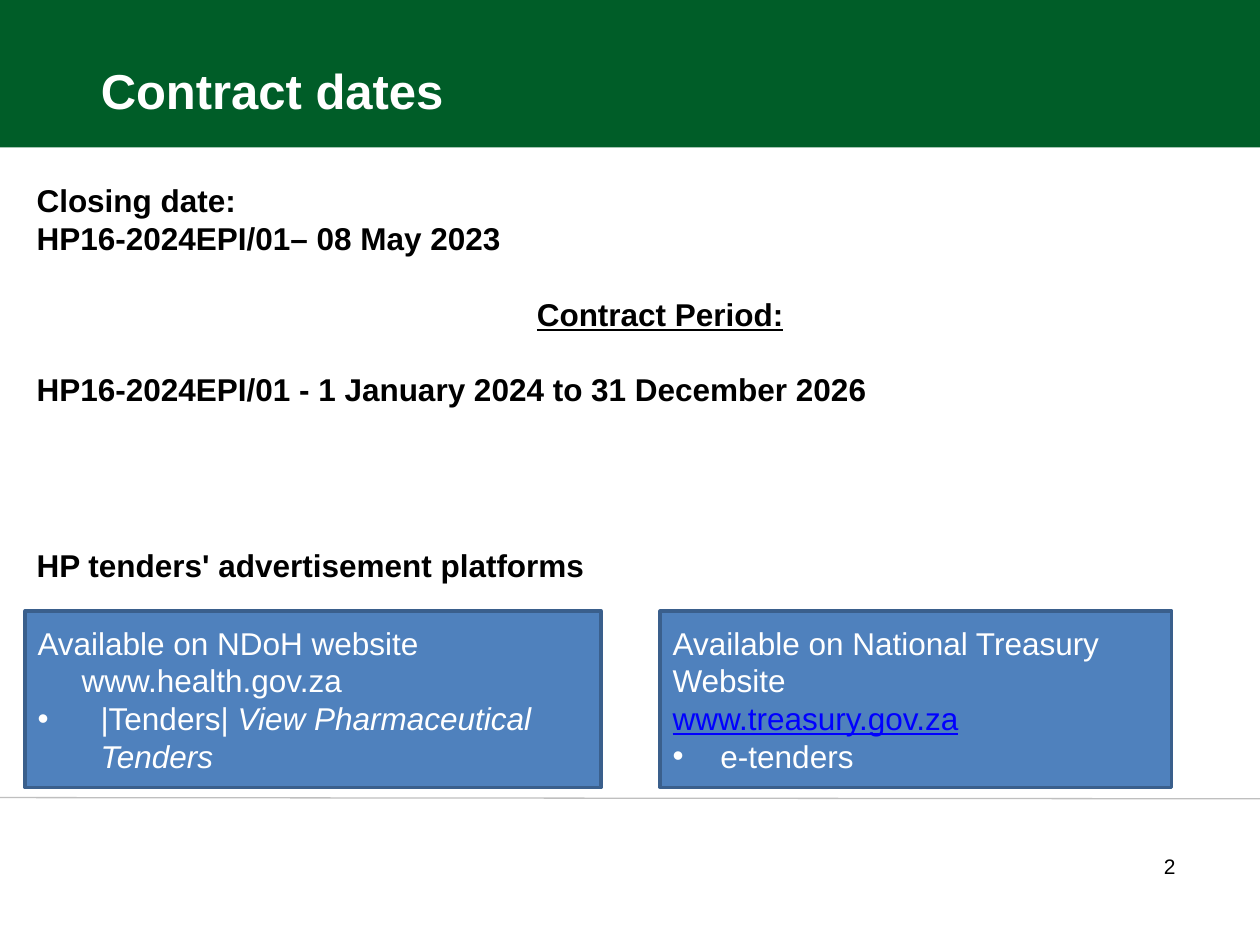
import dataclasses

import pptx
import pptx.dml.color
import pptx.enum.shapes
import pptx.enum.text
import pptx.oxml
import pptx.oxml.ns
import pptx.util

ALIGN = pptx.enum.text.PP_ALIGN
ANCHOR = pptx.enum.text.MSO_ANCHOR
RECTANGLE = pptx.enum.shapes.MSO_SHAPE.RECTANGLE


@dataclasses.dataclass(frozen=True)
class Theme:
    font: str = "Arial"
    band: str = "005D28"
    rule: str = "BFBFBF"
    panel: str = "4F81BD"
    panel_edge: str = "3A5F8C"
    dark: str = "000000"
    light: str = "FFFFFF"
    link: str = "0000FF"
    title_size: int = 28
    text_size: int = 18
    number_size: int = 12


THEME = Theme()
# The page is a grid of 100 columns and 75 rows, each 0.1 inch
CELL = 0.1
COLUMNS, ROWS = 100, 75


def grid(*cells):
    return [pptx.util.Inches(cell * CELL) for cell in cells]


def rgb(code):
    return pptx.dml.color.RGBColor.from_string(code)


def place(shape, left, top, width, height):
    shape.left, shape.top, shape.width, shape.height = grid(left, top, width, height)


def set_frame(shape, anchor):
    frame = shape.text_frame
    frame.word_wrap = True
    frame.auto_size = pptx.enum.text.MSO_AUTO_SIZE.NONE
    frame.vertical_anchor = anchor
    return frame


def set_indent(para, indent, bullet):
    """Indent a paragraph in inches, hanging when it has a bullet."""
    properties = para._p.get_or_add_pPr()
    margin = pptx.util.Inches(indent)
    properties.set("marL", str(margin))
    properties.set("indent", str(-margin if bullet else 0))
    namespace = pptx.oxml.ns.nsdecls("a")
    if bullet:
        markup = f'<a:buFont {namespace} typeface="{THEME.font}"/>', f'<a:buChar {namespace} char="•"/>'
    else:
        markup = (f"<a:buNone {namespace}/>",)
    for element in markup:
        properties.append(pptx.oxml.parse_xml(element))


def write(para, spans, size, color, bold=False, align=ALIGN.LEFT,
          before=0, indent=0, bullet=False):
    """Write spans of (text, font changes) into one paragraph."""
    set_indent(para, indent, bullet)
    para.alignment = align
    para.space_before = pptx.util.Pt(before)
    for text, changes in spans:
        span = para.add_run()
        span.text = text
        font = span.font
        font.name, font.size, font.bold = THEME.font, pptx.util.Pt(size), bold
        font.color.rgb = rgb(changes.get("color", color))
        font.italic = changes.get("italic", False)
        font.underline = changes.get("underline", False)


def write_all(frame, lines, **style):
    for index, (spans, options) in enumerate(lines):
        para = frame.add_paragraph() if index else frame.paragraphs[0]
        write(para, spans, **style, **options)


def add_box(page, area, fill, edge=None):
    box = page.shapes.add_shape(RECTANGLE, *grid(*area))
    box.shadow.inherit = False
    box.fill.solid()
    box.fill.fore_color.rgb = rgb(fill)
    if edge:
        box.line.color.rgb = rgb(edge)
        box.line.width = pptx.util.Pt(2)
    else:
        box.line.fill.background()
    return box


def add_background(page):
    band = add_box(page, (0, 0, COLUMNS, 11.7), THEME.band)
    rule = page.shapes.add_connector(
        pptx.enum.shapes.MSO_CONNECTOR.STRAIGHT, *grid(0, 63.3, COLUMNS, 63.4))
    rule.line.color.rgb = rgb(THEME.rule)
    rule.line.width = pptx.util.Pt(0.75)
    rule._element.spPr.append(
        pptx.oxml.parse_xml(f'<a:effectLst {pptx.oxml.ns.nsdecls("a")}/>'))
    # Both lie behind the placeholders
    for shape in (rule, band):
        page.shapes._spTree.insert(2, shape._element)


def add_title(page, text):
    title = page.shapes.title
    place(title, 7, -0.8, 60.8, 10.8)
    write_all(set_frame(title, ANCHOR.BOTTOM), [([(text, {})], {})],
              size=THEME.title_size, color=THEME.light, bold=True)


def add_dates(page, lines):
    body = page.placeholders[1]
    place(body, 1.9, 13.9, 101, 37.4)
    write_all(set_frame(body, ANCHOR.TOP), lines,
              size=THEME.text_size, color=THEME.dark, bold=True)


def add_panel(page, left, width, lines):
    panel = add_box(page, (left, 48.5, width, 14), THEME.panel, THEME.panel_edge)
    write_all(set_frame(panel, ANCHOR.MIDDLE), lines,
              size=THEME.text_size, color=THEME.light)


def add_page_number(page, number):
    box = page.shapes.add_textbox(*grid(10, 62.5, 85.7, 12.5))
    frame = set_frame(box, ANCHOR.MIDDLE)
    frame.margin_right = pptx.util.Inches(0.24)
    write_all(frame, [([(number, {})], {"align": ALIGN.RIGHT})],
              size=THEME.number_size, color=THEME.dark)


def main():
    deck = pptx.Presentation()
    deck.slide_width, deck.slide_height = grid(COLUMNS, ROWS)
    page = deck.slides.add_slide(deck.slide_layouts[1])

    add_background(page)
    add_title(page, "Contract dates")

    # Dates, with one open line between the groups
    open_line = 21.5
    add_dates(page, [
        ([("Closing date:", {})], {}),
        ([("HP16-2024EPI/01– 08 May 2023", {})], {}),
        ([("Contract Period:", {"underline": True})],
         {"align": ALIGN.CENTER, "before": open_line}),
        ([("HP16-2024EPI/01 - 1 January 2024 to 31 December 2026", {})],
         {"before": open_line}),
        ([("HP tenders' advertisement platforms", {})], {"before": 79}),
    ])

    # Advertisement platforms
    add_panel(page, 2, 45.7, [
        ([("Available on NDoH website", {})], {}),
        ([("www.health.gov.za", {})], {"indent": 0.35}),
        ([("|Tenders| ", {}), ("View Pharmaceutical Tenders", {"italic": True})],
         {"indent": 0.5, "bullet": True}),
    ])
    add_panel(page, 52.4, 40.6, [
        ([("Available on National Treasury Website", {})], {}),
        ([("www.treasury.gov.za", {"color": THEME.link, "underline": True})], {}),
        ([("e-tenders", {})], {"indent": 0.38, "bullet": True}),
    ])

    add_page_number(page, "2")
    deck.save("out.pptx")


if __name__ == "__main__":
    main()
